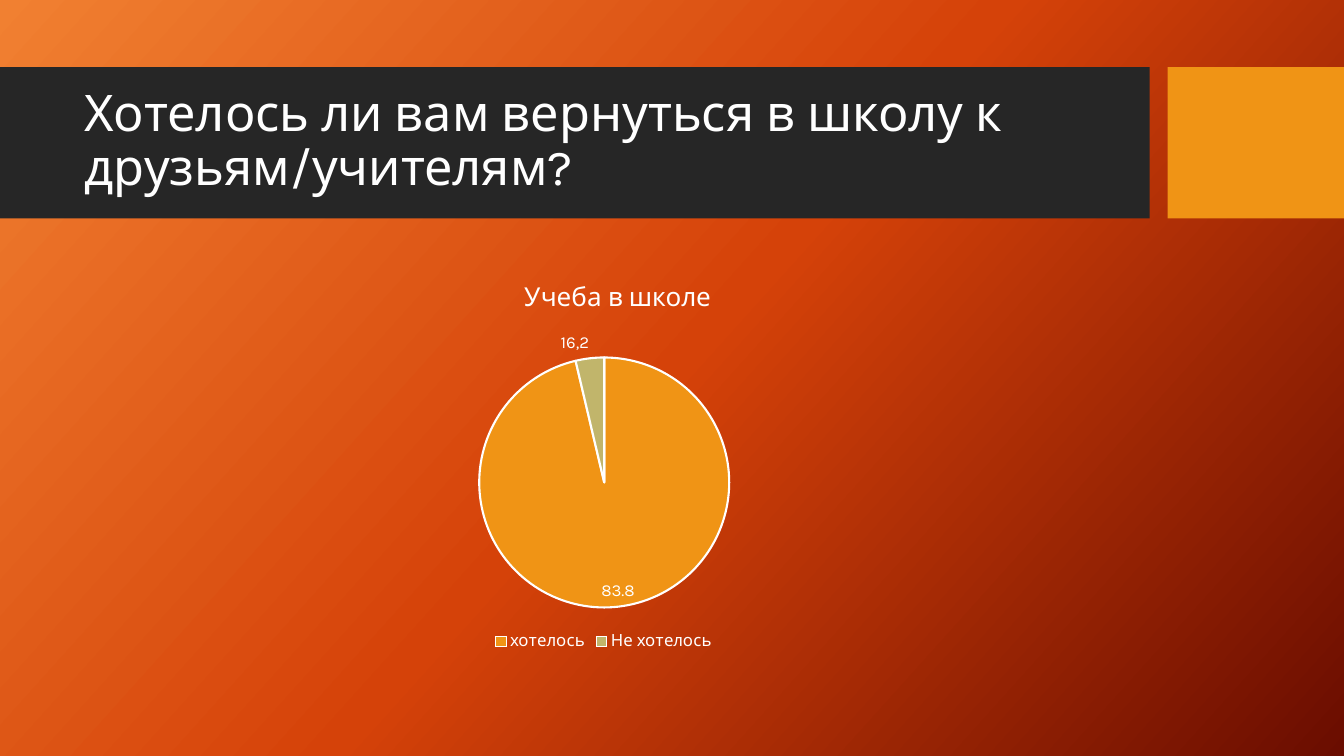
"""Build a survey slide with a title band and a pie chart."""
from copy import deepcopy
from dataclasses import dataclass

from pptx import Presentation
from pptx import util as u
from pptx.chart import data
from pptx.dml.color import RGBColor
from pptx.enum import chart as ch, shapes, text
from pptx.oxml import parse_xml
from pptx.oxml.ns import nsdecls, qn

PX = 9525
FONT = "Karla"
HUES = {
    "white": "FFFFFF", "dark": "262626", "gold": "F09415", "sage": "C1B56B",
    "light": "F18031", "mid": "D54209", "deep": "6A0D00",
}


@dataclass(frozen=True)
class Box:
    left: int
    top: int
    width: int
    height: int

    def emu(self) -> list[int]:
        return [n * PX for n in (self.left, self.top, self.width, self.height)]


@dataclass(frozen=True)
class Block:
    box: Box
    hue: str


@dataclass(frozen=True)
class Slice:
    name: str
    value: float
    hue: str
    label: str = ""


BLOCKS = [
    Block(Box(0, 64, 1095, 144), "dark"),
    Block(Box(1112, 64, 168, 144), "gold"),
]
SLICES = [
    Slice("хотелось", 83.8, "gold"),
    Slice("Не хотелось", 3.2, "sage", "16,2"),
]


def color(hue: str) -> RGBColor:
    return RGBColor.from_string(HUES[hue])


def style(font, size: float, hue: str = "white") -> None:
    font.name, font.size, font.bold = FONT, u.Pt(size), False
    font.color.rgb = color(hue)


def write(frame, words: str, *, size: float, hue: str = "white", lead: float | None = None) -> None:
    para = frame.paragraphs[0]
    para.line_spacing = lead
    run = para.add_run()
    run.text = words
    style(run.font, size, hue)


def paint(slide) -> None:
    fill = slide.background.fill
    fill.gradient()
    fill.gradient_angle = 360 - 42
    stops = next(slide._element.iter(qn("a:gsLst")))
    stops.insert(1, deepcopy(stops[0]))
    for stop, place, hue in zip(fill.gradient_stops, (0, 0.5, 1), ("light", "mid", "deep")):
        stop.position = place
        stop.color.rgb = color(hue)


def block(slide, item: Block) -> None:
    shape = slide.shapes.add_shape(shapes.MSO_SHAPE.RECTANGLE, *item.box.emu())
    shape.shadow.inherit = False
    shape.fill.solid()
    shape.fill.fore_color.rgb = color(item.hue)
    shape.line.fill.background()


def head(slide, box: Box, words: str) -> None:
    frame = slide.shapes.add_textbox(*box.emu()).text_frame
    frame.word_wrap = True
    frame.vertical_anchor = text.MSO_ANCHOR.MIDDLE
    write(frame, words, size=36, lead=0.9)


def pin(node, index: int, **spots: float) -> None:
    for old in node.findall(qn("c:layout")):
        node.remove(old)
    modes = "".join(f'<c:{key}Mode val="edge"/>' for key in "xy")
    sizes = "".join(f'<c:{key} val="{val}"/>' for key, val in spots.items())
    target = '<c:layoutTarget val="inner"/>' if "w" in spots else ""
    node.insert(index, parse_xml(
        f'<c:layout {nsdecls("c")}><c:manualLayout>{target}{modes}{sizes}'
        "</c:manualLayout></c:layout>"))


def pie(slide, box: Box, name: str, slices: list[Slice]) -> None:
    table = data.CategoryChartData()
    table.categories = [part.name for part in slices]
    table.add_series("Series 1", [part.value for part in slices])
    chart = slide.shapes.add_chart(ch.XL_CHART_TYPE.PIE, *box.emu(), table).chart
    style(chart.font, 10)

    chart.has_title = True
    write(chart.chart_title.text_frame, name, size=18.6)
    chart.chart_title.include_in_layout = False
    pin(chart.chart_title._element, 1, x=0.42, y=0.04)

    chart.has_legend = True
    chart.legend.position = ch.XL_LEGEND_POSITION.BOTTOM
    chart.legend.include_in_layout = False
    style(chart.legend.font, 12)

    plot = chart.plots[0]
    plot.vary_by_categories = True
    pin(next(chart._chartSpace.iter(qn("c:plotArea"))), 0, x=0.38, y=0.25, w=0.24, h=0.63)
    row = plot.series[0]
    labels = row.data_labels
    labels.show_value = True
    labels.position = ch.XL_LABEL_POSITION.BEST_FIT
    style(labels.font, 12)
    for index, part in enumerate(slices):
        point = row.points[index]
        point.format.fill.solid()
        point.format.fill.fore_color.rgb = color(part.hue)
        point.format.line.color.rgb = color("white")
        point.format.line.width = u.Pt(1.5)
        if part.label:
            write(point.data_label.text_frame, part.label, size=12)
            point.data_label.position = ch.XL_LABEL_POSITION.BEST_FIT


def main() -> None:
    deck = Presentation()
    deck.slide_width, deck.slide_height = 1280 * PX, 720 * PX
    slide = deck.slides.add_slide(deck.slide_layouts[6])
    paint(slide)
    for item in BLOCKS:
        block(slide, item)
    head(slide, Box(71, 79, 1009, 113), "Хотелось ли вам вернуться в школу к друзьям/учителям?")
    pie(slide, Box(71, 246, 1009, 378), "Учеба в школе", SLICES)
    deck.save("out.pptx")


if __name__ == "__main__":
    main()
